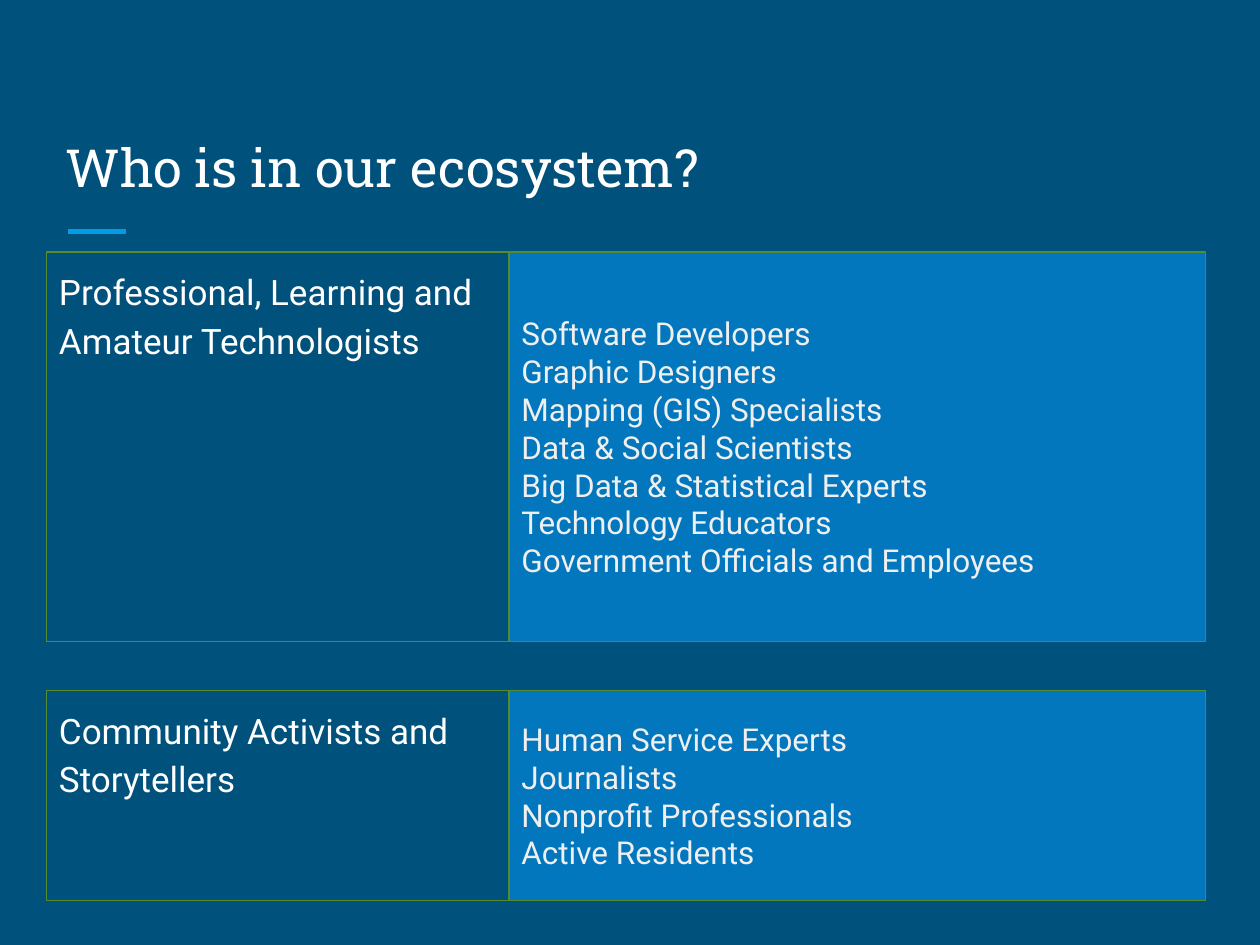
from dataclasses import dataclass

from lxml import etree
from pptx import Presentation
from pptx.dml.color import RGBColor
from pptx.enum.shapes import MSO_CONNECTOR, MSO_SHAPE
from pptx.enum.text import MSO_ANCHOR, MSO_AUTO_SIZE, PP_ALIGN
from pptx.oxml.ns import qn
from pptx.util import Inches, Pt

RECT, LINE = MSO_SHAPE.RECTANGLE, MSO_CONNECTOR.STRAIGHT
TOP, MIDDLE, BOTTOM = MSO_ANCHOR.TOP, MSO_ANCHOR.MIDDLE, MSO_ANCHOR.BOTTOM
LEFT, NO_FIT = PP_ALIGN.LEFT, MSO_AUTO_SIZE.NONE


@dataclass(frozen=True)
class Theme:
    back: RGBColor = RGBColor.from_string("00517C")
    panel: RGBColor = RGBColor.from_string("0277BD")
    accent: RGBColor = RGBColor.from_string("039BE5")
    edge: RGBColor = RGBColor.from_string("558B2F")
    white: RGBColor = RGBColor.from_string("FFFFFF")
    pale: RGBColor = RGBColor.from_string("EFEFEF")
    head: str = "Roboto Slab"
    body: str = "Roboto"
    title: int = 30
    group: int = 20
    item: int = 18


THEME = Theme()
PAD = Inches(0.1)
SPLIT = 3.67  # width of the group name column

# Top and height of each row, group name, members
GROUPS = [
    (2, 3.09, "Professional, Learning and Amateur Technologists",
     ["Software Developers", "Graphic Designers", "Mapping (GIS) Specialists",
      "Data & Social Scientists", "Big Data & Statistical Experts",
      "Technology Educators", "Government Officials and Employees"]),
    (5.48, 1.67, "Community Activists and Storytellers",
     ["Human Service Experts", "Journalists", "Nonprofit Professionals",
      "Active Residents"]),
]


def apply(obj, **vals):
    for name, val in vals.items():
        setattr(obj, name, val)


def write(shape, lines, anchor, font, size, color, **para):
    frame = shape.text_frame
    apply(frame, word_wrap=True, auto_size=NO_FIT, vertical_anchor=anchor,
          margin_left=PAD, margin_right=PAD, margin_top=PAD, margin_bottom=PAD)
    for i, line in enumerate(lines):
        p = frame.add_paragraph() if i else frame.paragraphs[0]
        apply(p, alignment=LEFT, **para)
        run = p.add_run()
        run.text = line
        apply(run.font, name=font, size=Pt(size))
        run.font.color.rgb = color


def add_box(slide, box, fill=None):
    shape = slide.shapes.add_shape(RECT, *map(Inches, box))
    shape.shadow.inherit = False
    if fill is None:
        shape.fill.background()
    else:
        shape.fill.solid()
        shape.fill.fore_color.rgb = fill
    shape.line.color.rgb = THEME.edge
    shape.line.width = Pt(0.75)
    return shape


def add_title(slide, box, text):
    x, y, w, h = map(Inches, box)
    title = slide.shapes.title
    apply(title, left=x, top=y, width=w, height=h)
    write(title, [text], BOTTOM, THEME.head, THEME.title, THEME.white)

    # Short accent rule below the title
    start, level = x + Inches(0.12), y + h + Inches(0.17)
    rule = slide.shapes.add_connector(LINE, start, level,
                                      start + Inches(0.46), level)
    rule.line.color.rgb = THEME.accent
    rule.line.width = Pt(3)
    etree.SubElement(rule.element.spPr, qn("a:effectLst"))


def add_group(slide, box, name, members):
    x, y, w, h = box
    # Group name on the left
    label = add_box(slide, (x, y, SPLIT, h))
    write(label, [name], TOP, THEME.body, THEME.group, THEME.white,
          line_spacing=1.15, space_after=Pt(16))
    # Members on the right
    panel = add_box(slide, (x + SPLIT, y, w - SPLIT, h), THEME.panel)
    write(panel, members, MIDDLE, THEME.body, THEME.item, THEME.pale)


def main():
    prs = Presentation()
    apply(prs, slide_width=Inches(10), slide_height=Inches(7.5))
    slide = prs.slides.add_slide(prs.slide_layouts[5])
    slide.background.fill.solid()
    slide.background.fill.fore_color.rgb = THEME.back

    add_title(slide, (0.42, 0.67, 9.15, 1), "Who is in our ecosystem?")
    for top, height, name, members in GROUPS:
        add_group(slide, (0.37, top, 9.2, height), name, members)
    prs.save("out.pptx")


if __name__ == "__main__":
    main()
